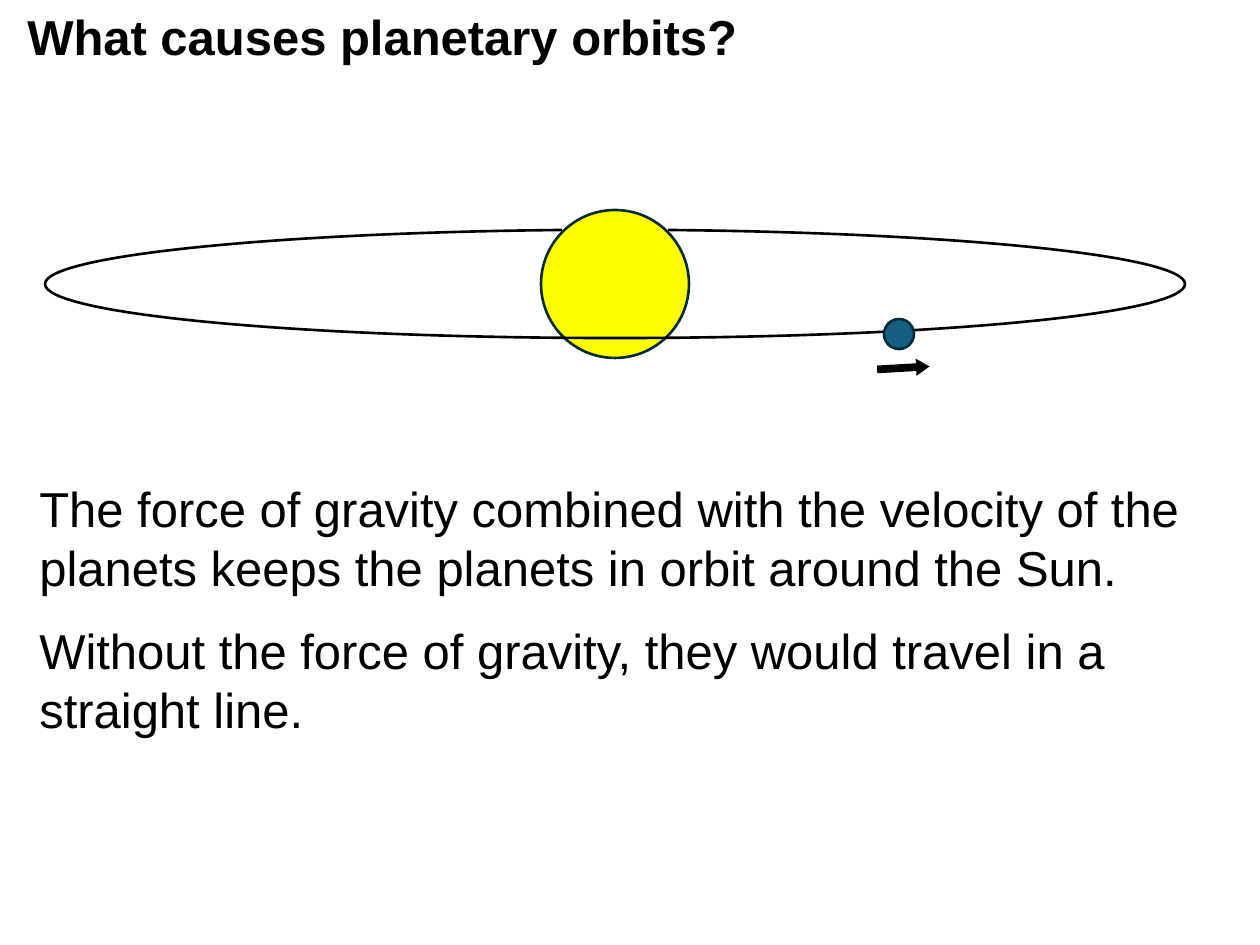
from lxml import etree
from pptx import Presentation
from pptx import util as u
from pptx.dml import color
from pptx.enum import shapes, text
from pptx.oxml import ns

SCALE = 914400 / 126
BLACK = "000000"
OUTLINE = "092A39"
BODY = (
    "The force of gravity combined with the velocity of the planets "
    "keeps the planets in orbit around the Sun.",
    "Without the force of gravity, they would travel in a straight line.",
)


def px(length):
    return u.Emu(round(length * SCALE))


def rgb(value):
    return color.RGBColor.from_string(value)


def set_values(target, values):
    for name, value in values.items():
        setattr(target, name, value)


def style_shape(shape, fill, line, width):
    shape.shadow.inherit = False
    if fill:
        shape.fill.solid()
        shape.fill.fore_color.rgb = rgb(fill)
    else:
        shape.fill.background()
    shape.line.color.rgb = rgb(line)
    shape.line.width = u.Pt(width)
    outline = shape.line._get_or_add_ln()
    etree.SubElement(outline, ns.qn("a:miter"), lim="800000")


def add_text(page, left, top, width, height, lines, bold=False):
    box = page.shapes.add_textbox(px(left), px(top), px(width), px(height))
    frame = box.text_frame
    set_values(frame, {
        "word_wrap": True,
        "auto_size": text.MSO_AUTO_SIZE.SHAPE_TO_FIT_TEXT,
    })
    for index, line in enumerate(lines):
        para = frame.add_paragraph() if index else frame.paragraphs[0]
        set_values(para, {
            "line_spacing": u.Pt(33.5),
            "space_before": u.Pt(14 if index else 0),
        })
        span = para.add_run()
        span.text = line
        set_values(span.font, {"name": "Arial", "size": u.Pt(28), "bold": bold})
        span.font.color.rgb = rgb(BLACK)


def add_preset(page, kind, left, top, width, height, fill, line, weight):
    shape = page.shapes.add_shape(kind, px(left), px(top), px(width), px(height))
    style_shape(shape, fill, line, weight)
    return shape


def curve_segments(shape, first, count):
    outline = shape._element.spPr.find(".//" + ns.qn("a:path"))
    lines = outline.findall(ns.qn("a:lnTo"))[first:first + 3 * count]
    for start in range(0, len(lines), 3):
        curve = etree.Element(ns.qn("a:cubicBezTo"))
        lines[start].addprevious(curve)
        for line in lines[start:start + 3]:
            curve.append(line[0])
            outline.remove(line)


def add_orbit(page, left, top, width, height):
    middle = width / 2
    right_half = [
        (middle + 53, 0), (middle + 58, 0),
        (middle + 346, 3), (width, 26), (width, height / 2),
        (width, height * 0.78), (middle + 315, height),
    ]
    left_half = [(width - x, y) for x, y in reversed(right_half)]
    points = [
        (px(left + x), px(top + y))
        for x, y in right_half + [(middle, height)] + left_half
    ]
    builder = page.shapes.build_freeform(*points[0])
    builder.add_line_segments(points[1:], close=False)
    orbit = builder.convert_to_shape()
    curve_segments(orbit, first=1, count=4)
    style_shape(orbit, None, BLACK, 1.5)


def add_solar_system(page, left, top, width, height):
    oval = shapes.MSO_SHAPE.OVAL
    sun, planet = 148, 30
    add_preset(page, oval, left + (width - sun) / 2, top, sun, sun,
               "FFFF00", OUTLINE, 1.5)
    add_orbit(page, left, top + (sun - height) / 2, width, height)
    add_preset(page, oval, left + 839, top + 109, planet, planet,
               "156082", OUTLINE, 1.5)
    arrow = add_preset(page, shapes.MSO_SHAPE.RIGHT_ARROW,
                       left + 834, top + 153, 47, 10, BLACK, BLACK, 2.25)
    arrow.rotation = 356.7
    arrow.adjustments[0] = 0.38
    arrow.adjustments[1] = 0.79


def main():
    deck = Presentation()
    set_values(deck, {"slide_width": px(1260), "slide_height": px(945)})
    page = deck.slides.add_slide(deck.slide_layouts[6])
    add_text(page, 27, 473, 1200, 280, BODY)
    add_text(page, 15, 0, 1245, 72, ["What causes planetary orbits?"], bold=True)
    add_solar_system(page, 45, 210, 1140, 108)
    deck.save("out.pptx")


if __name__ == "__main__":
    main()
